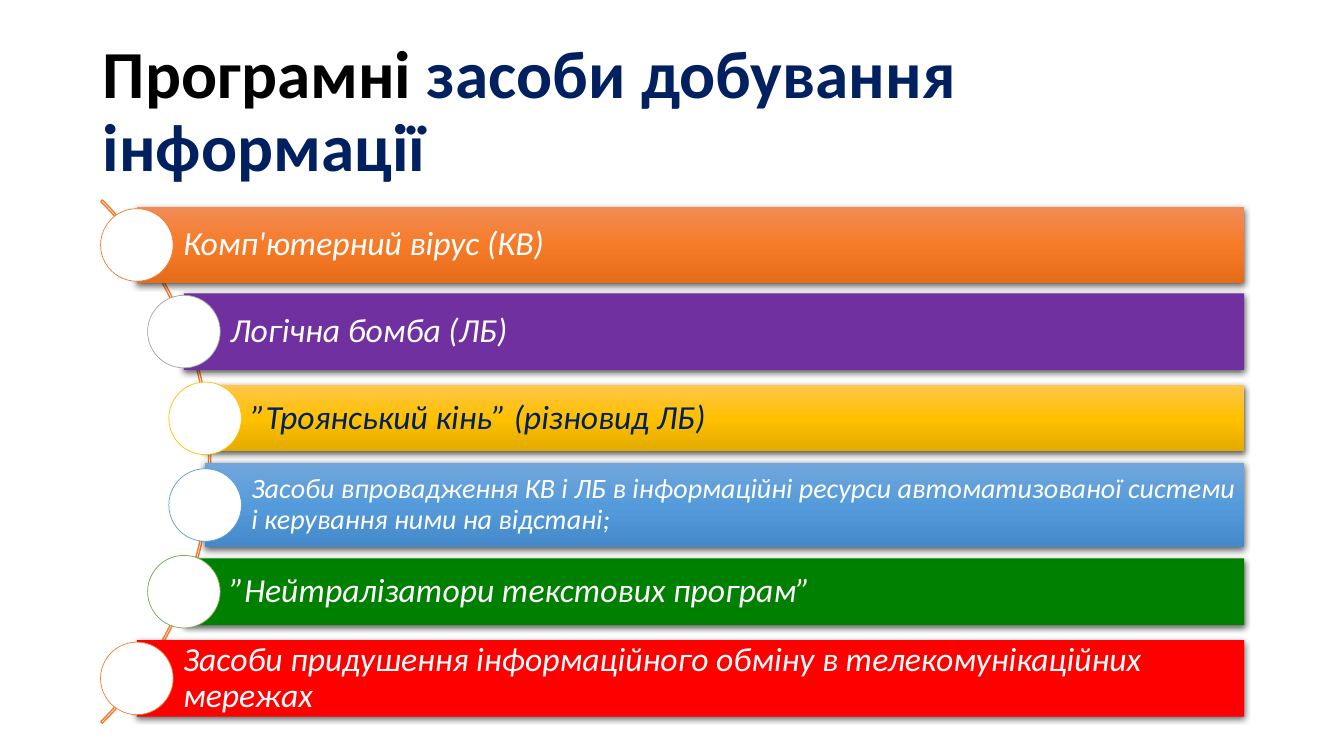
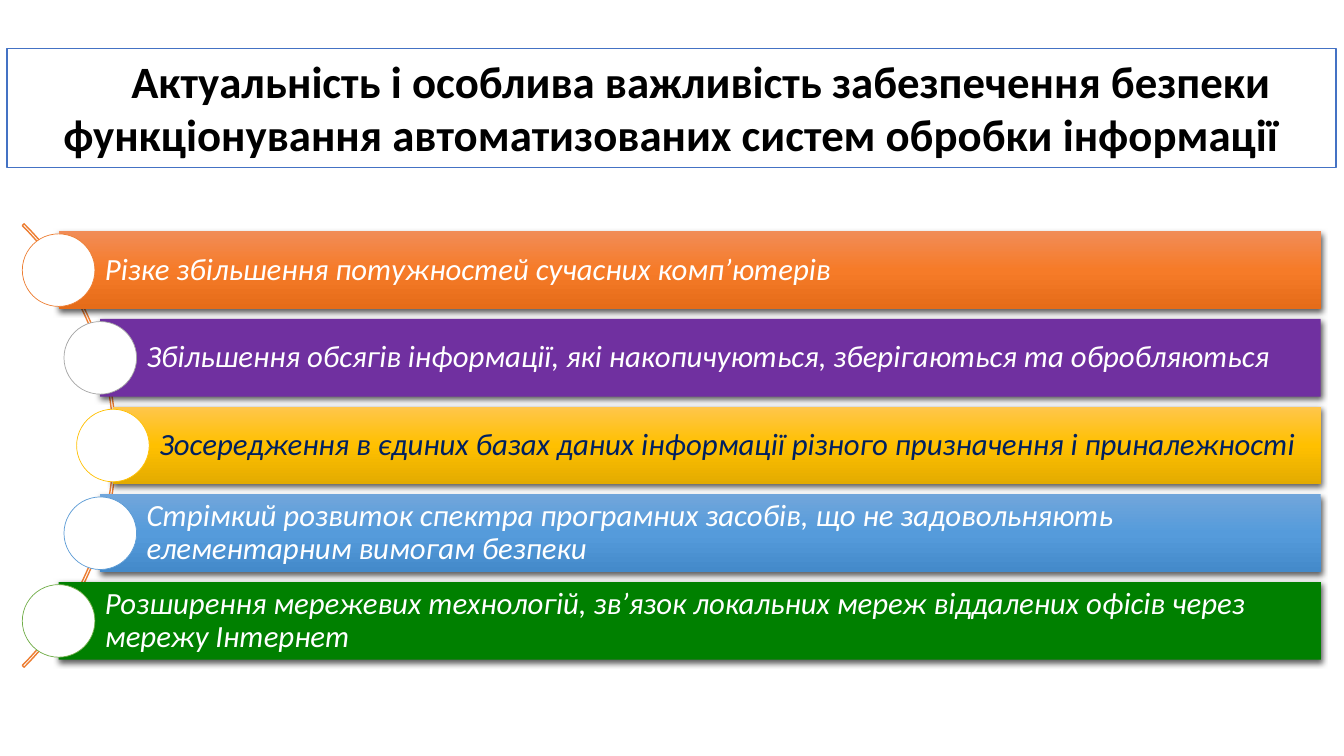
from dataclasses import dataclass
from math import sqrt

from pptx import Presentation
from pptx.dml.color import RGBColor
from pptx.enum.shapes import MSO_SHAPE as Shape
from pptx.enum.text import MSO_ANCHOR as Anchor
from pptx.enum.text import MSO_AUTO_SIZE as AutoSize
from pptx.enum.text import PP_ALIGN as Align
from pptx.oxml import parse_xml
from pptx.oxml.ns import nsdecls, qn
from pptx.util import Inches, Pt


@dataclass(frozen=True)
class Theme:
    font: str = "Calibri"
    black: str = "000000"
    white: str = "FFFFFF"
    navy: str = "002060"
    frame: str = "4472C4"
    arc: str = "ED7D31"
    title_size: int = 48
    frame_title_size: int = 32
    large_size: int = 24
    medium_size: int = 22
    small_size: int = 20


@dataclass(frozen=True)
class BarStyle:
    fill: tuple
    ring: str
    ink: str = Theme.white


@dataclass(frozen=True)
class Fan:
    center_x: float
    center_y: float
    radius: float
    pitch: float
    right: float
    thickness: float


@dataclass(frozen=True)
class Item:
    text: str
    style: BarStyle
    size: int
    height: float


THEME = Theme()
ORANGE = BarStyle(("F18C57", "F67B28", "E56C19"), "ED7D31")
PURPLE = BarStyle(("7030A0",), "A5A5A5")
GOLD = BarStyle(("FFC64B", "FFC000", "E3AB00"), "FFC000", THEME.navy)
BLUE = BarStyle(("71A6DB", "559BDB", "448ACA"), "5B9BD5")
GREEN = BarStyle(("008000",), "70AD47")
RED = BarStyle(("FF0000",), "ED7D31")

CIRCLE = 0.72
ARC_GAP = 0.03
TEXT_LEFT = 0.46
TEXT_MARGIN = 0.06

TOOLS_FAN = Fan(-1.58, 4.58, 3.67, 0.86, 12.34, 0.003)
TOOLS = [
    Item("Комп'ютерний вірус (КВ)", ORANGE, THEME.large_size, 0.76),
    Item("Логічна бомба (ЛБ)", PURPLE, THEME.large_size, 0.76),
    Item("”Троянський кінь” (різновид ЛБ)", GOLD, THEME.large_size, 0.66),
    Item("Засоби впровадження КВ і ЛБ в інформаційні ресурси автоматизованої "
         "системи і керування ними на відстані;", BLUE, THEME.small_size, 0.84),
    Item("”Нейтралізатори текстових програм”", GREEN, THEME.large_size, 0.66),
    Item("Засоби придушення інформаційного обміну в телекомунікаційних мережах",
         RED, THEME.large_size, 0.76),
]

REASONS_FAN = Fan(-1.96, 4.42, 3.11, 0.87, 13.1, 0.004)
REASONS = [
    Item(text, style, THEME.medium_size, 0.77)
    for text, style in (
        ("Різке збільшення потужностей сучасних комп’ютерів", ORANGE),
        ("Збільшення обсягів інформації, які накопичуються, зберігаються та "
         "обробляються", PURPLE),
        ("Зосередження в єдиних базах даних інформації різного призначення і "
         "приналежності", GOLD),
        ("Стрімкий розвиток спектра програмних засобів, що не задовольняють "
         "елементарним вимогам безпеки", BLUE),
        ("Розширення мережевих технологій, зв’язок локальних мереж віддалених "
         "офісів через мережу Інтернет", GREEN),
    )
]


def rgb(value):
    return RGBColor.from_string(value)


def set_outline(shape, color, width):
    shape.line.color.rgb = rgb(color)
    shape.line.width = Pt(width)


def add_plain_shape(slide, kind, left, top, width, height):
    shape = slide.shapes.add_shape(
        kind, Inches(left), Inches(top), Inches(width), Inches(height))
    shape.shadow.inherit = False
    return shape


def fill_shape(shape, colors):
    if len(colors) == 1:
        shape.fill.solid()
        shape.fill.fore_color.rgb = rgb(colors[0])
        return
    step = 100000 // (len(colors) - 1)
    stops = "".join(
        f'<a:gs pos="{index * step}"><a:srgbClr val="{color}"/></a:gs>'
        for index, color in enumerate(colors))
    shape.fill.background()
    properties = shape._element.spPr
    properties.replace(properties.find(qn("a:noFill")), parse_xml(
        f'<a:gradFill {nsdecls("a")} rotWithShape="1"><a:gsLst>{stops}</a:gsLst>'
        '<a:lin ang="5400000" scaled="0"/></a:gradFill>'))


def add_shadow(shape):
    effects = shape._element.spPr.find(qn("a:effectLst"))
    effects.append(parse_xml(
        f'<a:outerShdw {nsdecls("a")} blurRad="{Pt(4.5)}" dist="{Pt(1.5)}" '
        'dir="5400000" algn="ctr" rotWithShape="0">'
        f'<a:srgbClr val="{THEME.black}"><a:alpha val="63000"/></a:srgbClr>'
        '</a:outerShdw>'))


def set_title(slide, bounds, parts, size, align, anchor, spacing):
    title = slide.shapes.title
    title.left, title.top, title.width, title.height = map(Inches, bounds)
    frame = title.text_frame
    frame.word_wrap = True
    frame.auto_size = AutoSize.NONE
    frame.vertical_anchor = anchor
    para = frame.paragraphs[0]
    para.alignment = align
    para.line_spacing = spacing
    para.font.name = THEME.font
    para.font.size = Pt(size)
    para.font.bold = True
    for text, color in parts:
        span = para.add_run()
        span.text = text
        span.font.color.rgb = rgb(color)
    return title


def add_arc(slide, fan):
    side = 2 * fan.radius
    arc = add_plain_shape(slide, Shape.BLOCK_ARC, fan.center_x - fan.radius,
                          fan.center_y - fan.radius, side, side)
    for index, value in enumerate((189, 27, fan.thickness)):
        arc.adjustments[index] = value
    arc.fill.background()
    set_outline(arc, THEME.arc, 1)


def add_bar(slide, item, left, middle, right):
    bar = add_plain_shape(slide, Shape.RECTANGLE, left,
                          middle - item.height / 2, right - left, item.height)
    fill_shape(bar, item.style.fill)
    bar.line.fill.background()
    add_shadow(bar)
    frame = bar.text_frame
    frame.word_wrap = True
    frame.vertical_anchor = Anchor.MIDDLE
    frame.margin_left = Inches(TEXT_LEFT)
    frame.margin_right = frame.margin_top = frame.margin_bottom = Inches(TEXT_MARGIN)
    para = frame.paragraphs[0]
    para.text = item.text
    para.alignment = Align.LEFT
    para.line_spacing = 0.9
    para.font.name = THEME.font
    para.font.size = Pt(item.size)
    para.font.italic = True
    para.font.color.rgb = rgb(item.style.ink)


def add_circle(slide, style, center, middle):
    circle = add_plain_shape(slide, Shape.OVAL, center - CIRCLE / 2,
                             middle - CIRCLE / 2, CIRCLE, CIRCLE)
    fill_shape(circle, (THEME.white,))
    set_outline(circle, style.ring, 0.5)


def add_fan_list(slide, fan, items):
    add_arc(slide, fan)
    for index, item in enumerate(items):
        offset = (index - (len(items) - 1) / 2) * fan.pitch
        left = fan.center_x + sqrt((fan.radius - ARC_GAP) ** 2 - offset ** 2)
        middle = fan.center_y + offset
        add_bar(slide, item, left, middle, fan.right)
        add_circle(slide, item.style, left, middle)


def add_tools_slide(deck, layout):
    slide = deck.slides.add_slide(layout)
    set_title(slide, (0.92, 0.4, 11.5, 1.45),
              [("Програмні ", THEME.black),
               ("засоби добування інформації", THEME.navy)],
              THEME.title_size, Align.LEFT, Anchor.MIDDLE, 0.9)
    add_fan_list(slide, TOOLS_FAN, TOOLS)


def add_reasons_slide(deck, layout):
    slide = deck.slides.add_slide(layout)
    title = set_title(slide, (0.07, 0.48, 13.18, 1.18),
                      [("Актуальність і особлива важливість забезпечення безпеки "
                        "функціонування автоматизованих систем обробки інформації",
                        THEME.black)],
                      THEME.frame_title_size, Align.CENTER, Anchor.TOP, 1.0)
    fill_shape(title, (THEME.white,))
    set_outline(title, THEME.frame, 1)
    properties = title.text_frame.paragraphs[0]._p.get_or_add_pPr()
    properties.set("marL", "0")
    properties.set("indent", str(Inches(0.6)))
    add_fan_list(slide, REASONS_FAN, REASONS)


def main():
    deck = Presentation()
    deck.slide_width = Inches(13.33)
    deck.slide_height = Inches(7.5)
    layout = deck.slide_layouts.get_by_name("Title Only")
    add_tools_slide(deck, layout)
    add_reasons_slide(deck, layout)
    deck.save("out.pptx")


if __name__ == "__main__":
    main()
